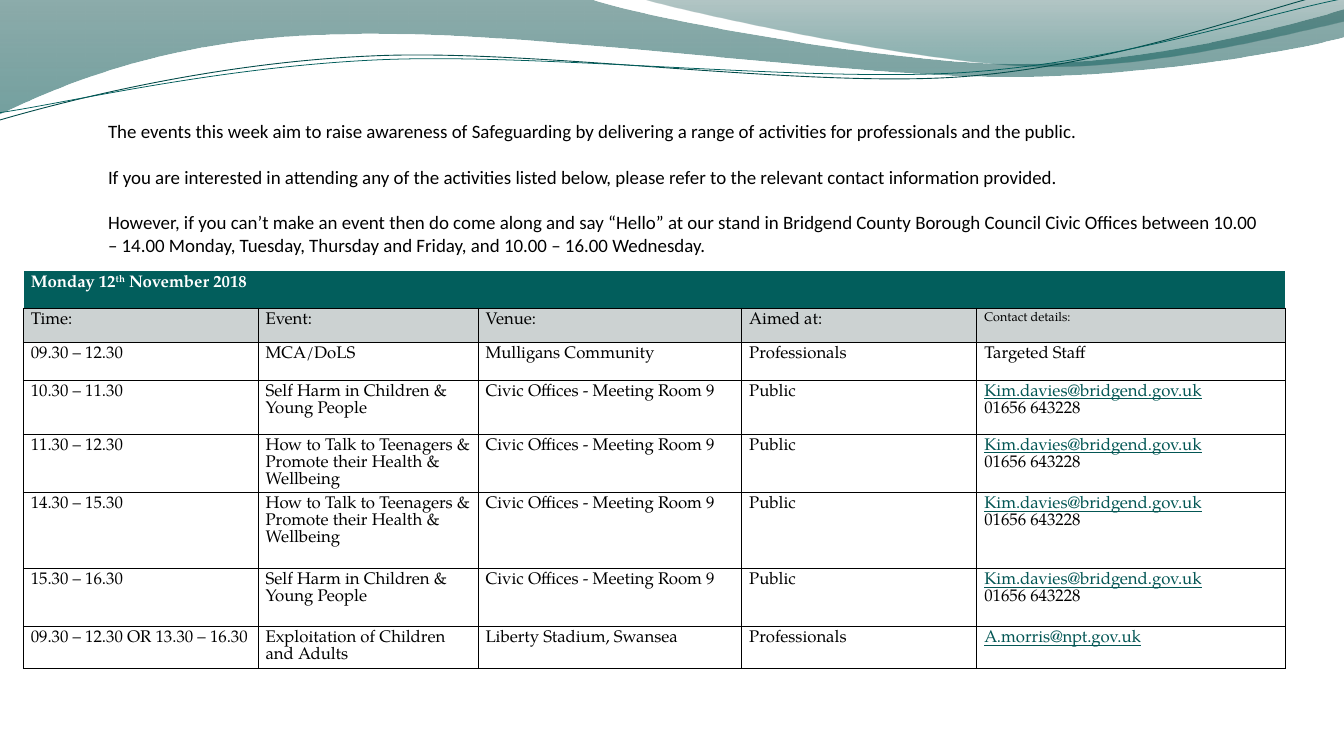
"""Build the Safeguarding Week slide with Monday's programme of events."""
from math import cos, radians, sin
from lxml.etree import SubElement
from pptx import Presentation
from pptx.dml.color import RGBColor
from pptx.oxml import parse_xml
from pptx.oxml.ns import nsdecls, qn
from pptx.util import Cm, Pt


def rgb(value):
    return RGBColor.from_string(value)


def write(paragraph, text, font="TeX Gyre Pagella", size=16, color="000000",
          bold=False, underline=False, baseline=0, spacing=None):
    run = paragraph.add_run()
    run.text = text
    run.font.name = font
    run.font.size = Pt(size)
    run.font.color.rgb = rgb(color)
    run.font.bold = bold
    run.font.underline = underline
    if baseline:
        run.font._element.set("baseline", str(baseline * 1000))
    if spacing:
        paragraph.line_spacing = Pt(spacing)


presentation = Presentation()
presentation.slide_width = Cm(45.16)
presentation.slide_height = Cm(25.4)
slide = presentation.slides.add_slide(presentation.slide_layouts[6])

inch = Cm(2.54)
tilt = 2.7
wide_wave = [
    (0, -0.01), (7.83, -0.01), (8.46, 0.22, 11.8, 0.84, 13.48, 0.84),
    (15.17, 0.84, 17.04, 0.34, 17.78, 0.12), (17.8, 0.48),
    (17.48, 0.58, 15.46, 1.01, 13.26, 1.01), (11.06, 1, 6.79, 0.37, 4.57, 0.45),
    (2.3, 0.47, 0.81, 1.11, -0.02, 1.51)]
right_wave = [
    (8.52, -0.01), (9.06, 0.15, 12.12, 0.82, 13.67, 0.87),
    (15.21, 0.92, 17.09, 0.43, 17.78, 0.28), (17.78, 0)]
upper_strand = [
    (-0.01, 1.59), (0.85, 1.34, 2.81, 0.83, 4.92, 0.74),
    (7.03, 0.64, 10.53, 1.16, 12.66, 1.02), (14.8, 0.87, 16.69, 0.11, 17.75, -0.13)]
lower_strand = [
    (0, 1.49), (0.84, 1.37, 2.91, 0.88, 5.04, 0.79),
    (7.16, 0.7, 10.61, 1.09, 12.74, 0.96), (14.86, 0.82, 16.73, 0.18, 17.78, -0.02)]
ribbons = [
    (wide_wave, [(0, "004745", 45), (1, "00514F", 55)], None, None),
    (right_wave, [(0, "004240", 30), (0.8, "005553", 45)], None, None),
    (upper_strand, None, ("034C4A", 0.85), (8.87, 0.78)),
    (lower_strand, None, ("025E5C", 0.75), (8.89, 0.79))]

for segments, gradient, stroke, pivot in ribbons:
    points = [pair for segment in segments for pair in zip(segment[::2], segment[1::2])]
    if pivot:
        px, py = pivot
        c, s = cos(radians(tilt)), sin(radians(tilt))
        points = [(px + (x - px) * c - (y - py) * s, py + (x - px) * s + (y - py) * c)
                  for x, y in points]
    outline = [(x * inch, y * inch) for x, y in points]
    builder = slide.shapes.build_freeform(*outline[0])
    builder.add_line_segments(outline[1:], close=bool(gradient))
    ribbon = builder.convert_to_shape()
    ribbon.shadow.inherit = False
    steps = iter(ribbon._element.xpath(".//a:path/a:lnTo"))
    for segment in segments[1:]:
        step = next(steps)
        if len(segment) == 6:
            step.tag = qn("a:cubicBezTo")
            for _ in range(2):
                follower = next(steps)
                step.append(follower[0])
                follower.getparent().remove(follower)
    if gradient:
        ribbon.line.fill.background()
        ribbon.fill.gradient()
        ribbon.fill.gradient_angle = 270
        for stop, (position, color, _) in zip(ribbon.fill.gradient_stops, gradient):
            stop.position = position
            stop.color.rgb = rgb(color)
        for tone, (_, _, opacity) in zip(ribbon._element.xpath(".//a:gs/a:srgbClr"), gradient):
            SubElement(tone, qn("a:alpha")).set("val", str(opacity * 1000))
    else:
        ribbon.rotation = 360 - tilt
        ribbon.fill.background()
        ribbon.line.color.rgb = rgb(stroke[0])
        ribbon.line.width = Pt(stroke[1])

column_widths = [7.89, 7.39, 8.86, 7.9, 10.36]
row_heights = [1.26, 1.14, 1.28, 1.82, 1.95, 2.55, 1.95, 1.38]
room = "Civic Offices - Meeting Room 9"
self_harm = "Self Harm in Children & Young People"
teenagers = "How to Talk to Teenagers & Promote their Health & Wellbeing"
kim = "Kim.davies@bridgend.gov.uk\n01656 643228"
programme = [
    ("Time:", "Event:", "Venue:", "Aimed at:", "Contact details:"),
    ("09.30 – 12.30", "MCA/DoLS", "Mulligans Community", "Professionals", "Targeted Staff"),
    ("10.30 – 11.30", self_harm, room, "Public", kim),
    ("11.30 – 12.30", teenagers, room, "Public", kim),
    ("14.30 – 15.30", teenagers, room, "Public", kim),
    ("15.30 – 16.30", self_harm, room, "Public", kim),
    ("09.30 – 12.30 OR 13.30 – 16.30", "Exploitation of Children and Adults",
     "Liberty Stadium, Swansea", "Professionals", "A.morris@npt.gov.uk")]

schedule = slide.shapes.add_table(
    len(row_heights), len(column_widths), Cm(0.78), Cm(9.09),
    Cm(sum(column_widths)), Cm(sum(row_heights))).table
schedule.first_row = False
schedule.horz_banding = False
for column, width in zip(schedule.columns, column_widths):
    column.width = Cm(width)
for row, height in zip(schedule.rows, row_heights):
    row.height = Cm(height)

schedule.cell(0, 0).merge(schedule.cell(0, len(column_widths) - 1))
day = schedule.cell(0, 0).text_frame.paragraphs[0]
for text, baseline in [("Monday 12", 0), ("th", 30), (" November 2018", 0)]:
    write(day, text, color="FFFFFF", bold=True, baseline=baseline, spacing=16.2)

for row_index, entries in enumerate(programme, 1):
    for column_index, entry in enumerate(entries):
        frame = schedule.cell(row_index, column_index).text_frame
        size = 12 if entry == "Contact details:" else 16
        for line_index, text in enumerate(entry.split("\n")):
            paragraph = frame.add_paragraph() if line_index else frame.paragraphs[0]
            address = "@" in text
            write(paragraph, text, size=size, color="035654" if address else "000000",
                  underline=address, spacing=size * 1.01)

for row_index, row in enumerate(schedule.rows):
    for cell in row.cells:
        if row_index < 2:
            cell.fill.solid()
            cell.fill.fore_color.rgb = rgb(("025E5C", "CCD2D2")[row_index])
        else:
            cell.fill.background()
        properties = cell._tc.get_or_add_tcPr()
        for position, side in enumerate("LRTB"):
            color = "FFFFFF" if row_index == 0 and side != "B" else "000000"
            properties.insert(position, parse_xml(
                f'<a:ln{side} {nsdecls("a")} w="12700"><a:solidFill>'
                f'<a:srgbClr val="{color}"/></a:solidFill></a:ln{side}>'))

introduction = slide.shapes.add_textbox(Cm(3.38), Cm(3.91), Cm(39.4), Cm(4.88)).text_frame
introduction.word_wrap = True
messages = [
    "The events this week aim to raise awareness of Safeguarding by delivering a range of "
    "activities for professionals and the public.",
    "If you are interested in attending any of the activities listed below, please refer to "
    "the relevant contact information provided.",
    "However, if you can’t make an event then do come along and say “Hello” at our stand in "
    "Bridgend County Borough Council Civic Offices between 10.00 – 14.00 Monday, Tuesday, "
    "Thursday and Friday, and 10.00 – 16.00 Wednesday."]
for index, message in enumerate(messages):
    paragraph = introduction.add_paragraph() if index else introduction.paragraphs[0]
    paragraph.space_before = Pt(21.6 if index else 0)
    write(paragraph, message, font="Calibri", size=18)

presentation.save("out.pptx")
